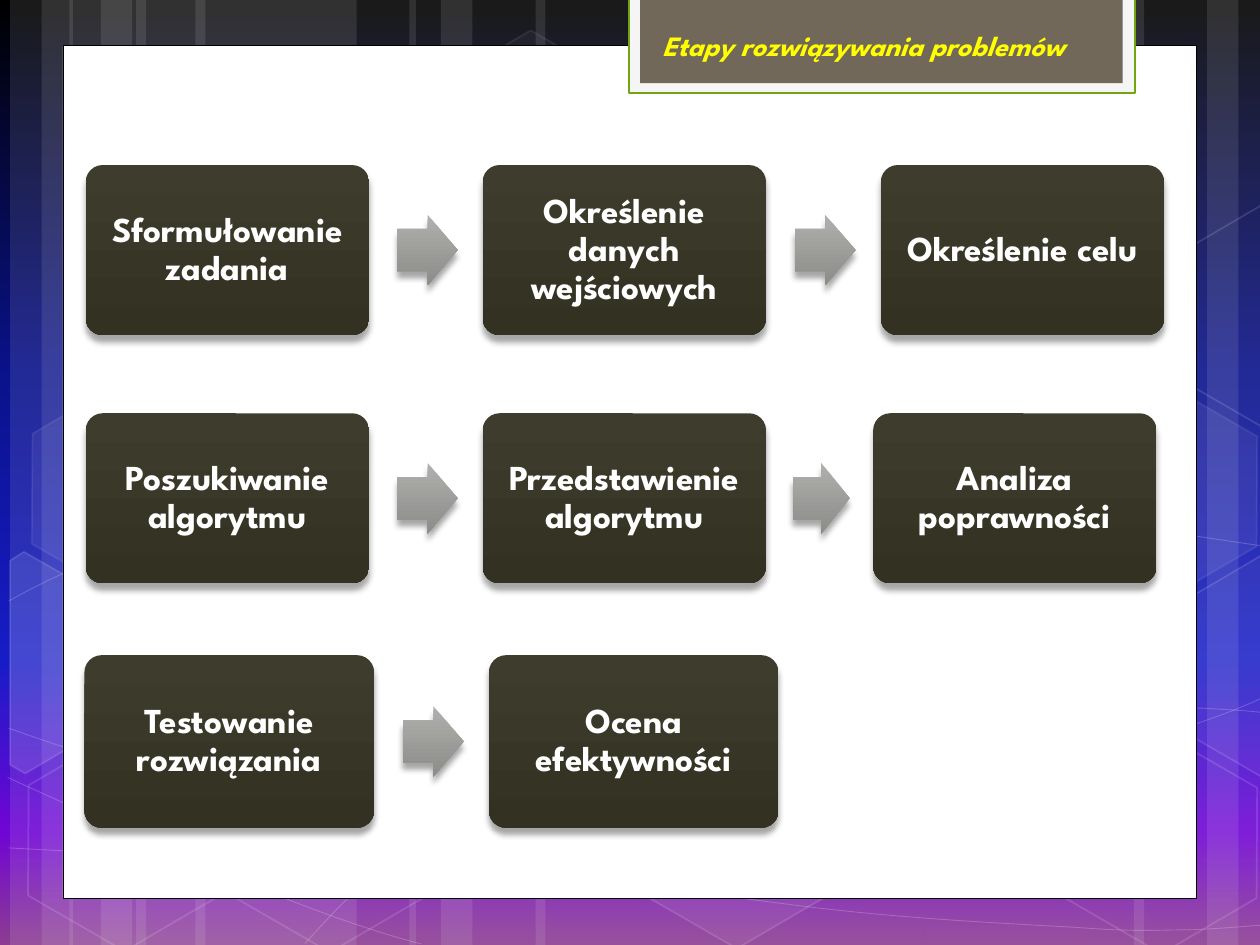
from lxml import etree
from pptx import Presentation
from pptx.dml.color import RGBColor
from pptx.enum.shapes import MSO_SHAPE
from pptx.enum.text import MSO_ANCHOR, PP_ALIGN
from pptx.oxml import parse_xml
from pptx.oxml.ns import nsdecls, qn
from pptx.util import Inches, Pt

FONT = "League Spartan"
rgb = RGBColor.from_string


def blend(fill, root, stops):
    """Fill from top to bottom; root is the XML element that holds the fill."""
    fill.gradient()
    fill.gradient_angle = 270
    marks = next(root.iter(qn("a:gsLst")))
    for old in list(marks):
        marks.remove(old)
    for place, hue in stops:
        stop = etree.SubElement(marks, qn("a:gs"), pos=str(place * 1000))
        etree.SubElement(stop, qn("a:srgbClr"), val=hue)


def style(shape, fill=None, alpha=100, line=None, width=1, fade=100):
    """Plain fill and outline, with opacity in percent."""
    shape.shadow.inherit = False
    for target, hue, share, route in (
        (shape.fill, fill, alpha, "a:solidFill/a:srgbClr"),
        (shape.line.fill, line, fade, "a:ln/a:solidFill/a:srgbClr"),
    ):
        if hue is None:
            target.background()
            continue
        target.solid()
        target.fore_color.rgb = rgb(hue)
        if share < 100:
            tone = shape.element.spPr.xpath(route)[0]
            etree.SubElement(tone, qn("a:alpha"), val=str(share * 1000))
    if line:
        shape.line.width = Pt(width)


prs = Presentation()
prs.slide_width, prs.slide_height = Inches(10), Inches(7.5)
slide = prs.slides.add_slide(prs.slide_layouts[6])
shapes = slide.shapes
blend(slide.background.fill, slide.element, [
    (0, "000000"), (40, "0A128C"), (70, "181CC7"), (88, "7005D4"), (100, "8C3D91")])

# Vertical light bands
bands = [(1.08, 1.75), (0.08, 0.5), (0.33, 0.83), (1.55, 1.75), (0.55, 0.5), (0.8, 0.83),
         (7.33, 1.75), (9.58, 0.5), (9, 0.83), (4.25, 3.08), (3.25, 0.5), (3.5, 0.83)]
for left, wide in bands:
    band = shapes.add_shape(
        MSO_SHAPE.RECTANGLE, Inches(left), 0, Inches(wide), prs.slide_height)
    style(band, "FFFFFF", 10)

# Thin waves: a start point, then Bezier pieces (two controls, end) or a line's end
waves = [
    [(0.07, 6.73), (0.61, 6.76, 1.15, 6.79, 1.9, 6.78), (2.65, 6.77, 3.58, 6.75, 4.58, 6.65),
     (5.58, 6.55, 7, 6.36, 7.92, 6.17), (8.83, 5.98, 9.77, 5.68, 10.07, 5.51)],
    [(0.07, 4.77), (0.36, 4.61, 0.65, 4.46, 1.21, 4.31), (1.78, 4.16, 2.59, 3.94, 3.47, 3.87),
     (4.36, 3.8, 5.44, 3.79, 6.54, 3.87), (7.64, 3.95, 9.47, 4.26, 10.07, 4.34)],
    [(0.06, 6.17), (1.27, 6.72, 2.47, 7.27, 3.34, 7.49)],
    [(0.07, 5.78), (0.38, 5.89, 0.7, 6, 1.28, 6.16), (1.86, 6.31, 2.73, 6.56, 3.57, 6.73),
     (4.4, 6.9, 5.45, 7.08, 6.28, 7.18), (7.11, 7.29, 8, 7.33, 8.53, 7.36),
     (9.05, 7.4, 9.19, 7.38, 9.45, 7.38), (9.71, 7.37, 9.89, 7.35, 10.07, 7.34)],
    [(2.42, 7.49), (2.6, 7.29, 2.78, 7.09, 3.02, 6.91), (3.26, 6.73, 3.6, 6.53, 3.88, 6.39),
     (4.16, 6.25, 4.33, 6.19, 4.7, 6.09), (5.06, 5.99, 5.73, 5.85, 6.08, 5.78),
     (6.44, 5.71, 6.49, 5.71, 6.8, 5.69), (7.11, 5.66, 7.6, 5.63, 7.94, 5.62),
     (8.29, 5.61, 8.86, 5.62, 8.86, 5.62), (9.53, 5.62),
     (9.71, 5.63, 9.88, 5.64, 9.97, 5.65), (10.06, 5.66, 10.03, 5.65, 10.06, 5.66)],
]
for start, *pieces in waves:
    pen = shapes.build_freeform(*map(Inches, start))
    pen.add_line_segments([tuple(map(Inches, p[-2:])) for p in pieces], close=False)
    wave = pen.convert_to_shape()
    style(wave, line="FFFFFF", width=0.5, fade=20)
    for leg, piece in zip(list(wave.element.iter(qn("a:lnTo"))), pieces):
        if len(piece) == 2:
            continue
        curve = etree.Element(qn("a:cubicBezTo"))
        for x, y in zip(piece[::2], piece[1::2]):
            etree.SubElement(curve, qn("a:pt"), x=str(Inches(x) - wave.left),
                             y=str(Inches(y) - wave.top))
        leg.getparent().replace(leg, curve)

# Hexagons, whole and cut by the slide edge
cells = [(3.34, 0.36, 4, 8), (4.97, 5.89, 6, 12), (0.11, 5.91, 0, 12), (0.14, 3.12, 7, 8),
         (1.74, 5.92, 0, 12), (8.34, 5.93, 0, 12), (8.34, 3.14, 7, 8)]
for left, top, alpha, fade in cells:
    cell = shapes.add_shape(
        MSO_SHAPE.HEXAGON, Inches(left), Inches(top), Inches(1.75), Inches(1.52))
    cell.adjustments[0] = 0.285
    cell.rotation = 30
    style(cell, "FFFFFF" if alpha else None, alpha, "FFFFFF", 1, fade)

cuts = [
    ([(0.08, 4.45), (0.19, 4.38), (0.96, 4.82), (0.95, 5.7), (0.2, 6.14), (0.08, 6.07)], 10),
    ([(9.26, 4.85), (10.01, 4.41), (10.09, 4.46), (10.09, 6.13), (10.02, 6.17), (9.26, 5.73)], 4),
    ([(9.26, 2.07), (10.01, 1.63), (10.1, 1.68), (10.09, 3.35), (10.02, 3.39), (9.26, 2.95)], 0),
]
for corners, alpha in cuts:
    points = [(Inches(x), Inches(y)) for x, y in corners]
    pen = shapes.build_freeform(*points[0])
    pen.add_line_segments(points[1:], close=True)
    style(pen.convert_to_shape(), "FFFFFF" if alpha else None, alpha, "FFFFFF", 1, 12)

# White page and title tab
panels = [((0.5, 0.36, 9, 6.77), "FFFFFF", "000000", 0.5),
          ((4.99, -0.02, 4.02, 0.76), "F5F5F5", "74A510", 1.25),
          ((5.08, -0.02, 3.83, 0.68), "71685A", None, 0)]
for place, fill, line, width in panels:
    panel = shapes.add_shape(MSO_SHAPE.RECTANGLE, *map(Inches, place))
    style(panel, fill, line=line, width=width)

title = shapes.add_textbox(*map(Inches, (5.16, 0.18, 3.7, 0.37)))
title.text_frame.word_wrap = True
title.text_frame.text = "Etapy rozwiązywania problemów"
font = title.text_frame.paragraphs[0].runs[0].font
font.name, font.size, font.bold, font.italic = FONT, Pt(16), True, True
font.color.rgb = rgb("FFFF00")

# Steps: top, card width, card height, card lefts, texts
rows = [
    (1.31, 2.25, 1.35, (0.68, 3.83, 6.99),
     ("Sformułowanie zadania", "Określenie danych wejściowych", "Określenie celu")),
    (3.28, 2.25, 1.35, (0.68, 3.83, 6.93),
     ("Poszukiwanie algorytmu", "Przedstawienie algorytmu", "Analiza poprawności")),
    (5.2, 2.3, 1.37, (0.67, 3.88), ("Testowanie rozwiązania", "Ocena efektywności")),
]
SHADE = (f'<a:outerShdw {nsdecls("a")} blurRad="44450" dist="50800" dir="5400000" '
         'algn="ctr" rotWithShape="0"><a:srgbClr val="000000"><a:alpha val="34000"/>'
         '</a:srgbClr></a:outerShdw>')
for top, wide, high, lefts, texts in rows:
    items = []
    for i, (left, text) in enumerate(zip(lefts, texts)):
        if i:
            start = lefts[i - 1] + wide
            gap = left - start
            arrow = shapes.add_shape(
                MSO_SHAPE.RIGHT_ARROW, Inches(start + 0.25 * gap),
                Inches(top + high / 2 - 0.28), Inches(0.53 * gap), Inches(0.56))
            arrow.adjustments[0] = 0.6
            items.append((arrow, "AFAFAD", "8C8C89"))
        card = shapes.add_shape(
            MSO_SHAPE.ROUNDED_RECTANGLE, Inches(left), Inches(top), Inches(wide), Inches(high))
        card.adjustments[0] = 0.1
        items.append((card, "3E3D2D", "333222"))
        frame = card.text_frame
        frame.word_wrap = True
        frame.vertical_anchor = MSO_ANCHOR.MIDDLE
        frame.margin_left = frame.margin_right = Inches(0.12)
        frame.text = text
        para = frame.paragraphs[0]
        para.alignment = PP_ALIGN.CENTER
        para.line_spacing = 0.9
        font = para.runs[0].font
        font.name, font.size, font.bold = FONT, Pt(20), True
        font.color.rgb = rgb("FFFFFF")
    for item, light, dark in items:
        style(item)
        blend(item.fill, item.element.spPr, [(0, light), (100, dark)])
        item.element.spPr.find(qn("a:effectLst")).append(parse_xml(SHADE))

prs.save("out.pptx")
